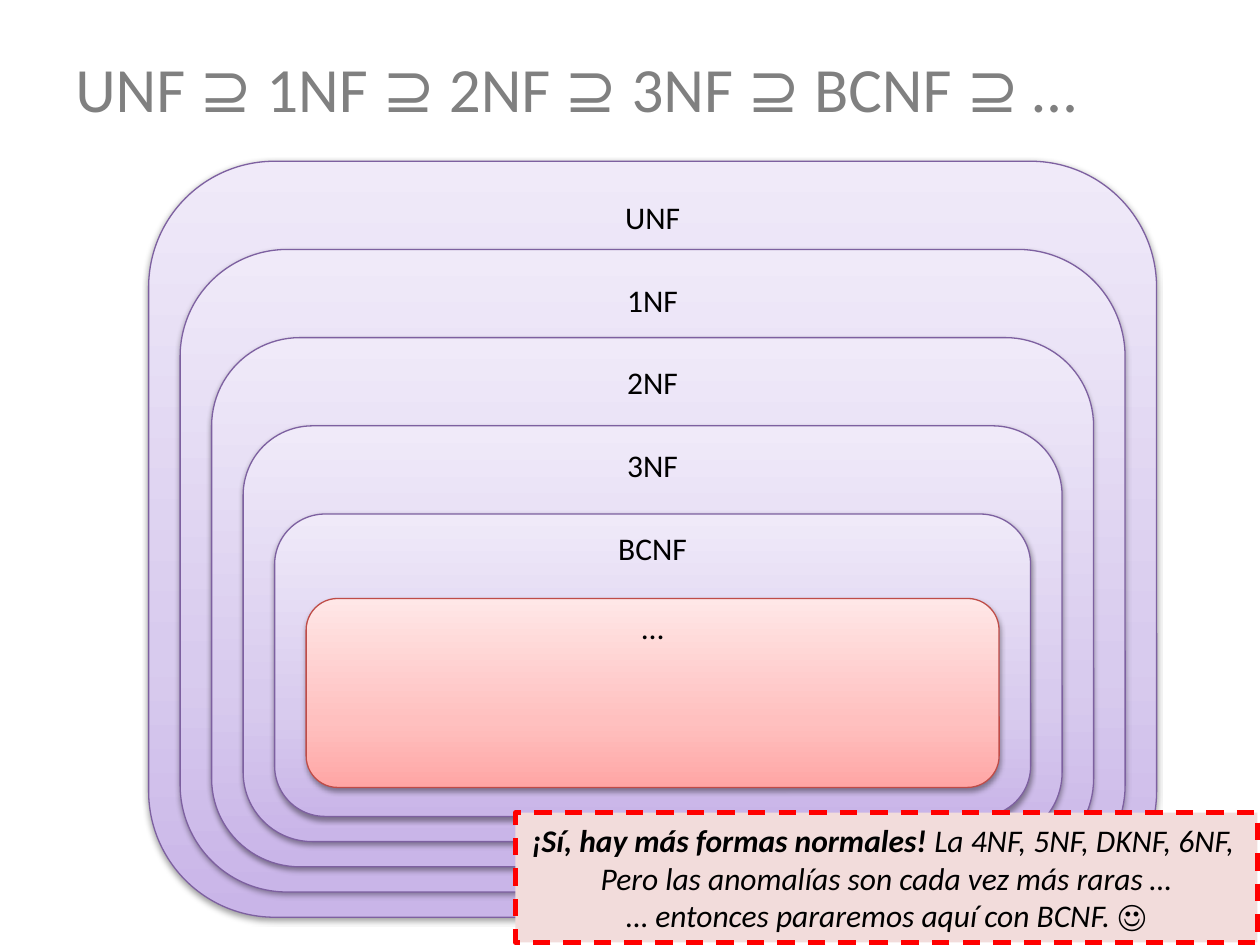
"""Build a slide showing the normal forms as nested sets."""
from copy import deepcopy

from lxml import etree
from pptx import Presentation
from pptx.dml.color import RGBColor
from pptx.enum import dml, shapes, text
from pptx.oxml import ns
from pptx.util import Inches, Pt

BLACK = RGBColor(0x00, 0x00, 0x00)
GREY = RGBColor(0x80, 0x80, 0x80)
RED = RGBColor(0xFF, 0x00, 0x00)
PINK = RGBColor(0xF2, 0xDC, 0xDB)
PURPLE_LINE = RGBColor(0x7D, 0x60, 0xA0)
PURPLE_STOPS = [RGBColor(0xC9, 0xB5, 0xE8), RGBColor(0xD8, 0xCB, 0xEE), RGBColor(0xF0, 0xEA, 0xF9)]
RED_LINE = RGBColor(0xBF, 0x4C, 0x48)
RED_STOPS = [RGBColor(0xFF, 0xA6, 0xA5), RGBColor(0xFF, 0xC0, 0xBF), RGBColor(0xFF, 0xE7, 0xE7)]
STOP_POSITIONS = [0, 0.35, 1]


def add_run(paragraph, words, size=18, color=BLACK, **styles):
    run = paragraph.add_run()
    run.text = words
    run.font.color.rgb = color
    for name, value in {"name": "Calibri", "size": Pt(size), **styles}.items():
        setattr(run.font, name, value)


def add_set(slide, label, box, stops, line_color):
    shape = slide.shapes.add_shape(
        shapes.MSO_SHAPE.ROUNDED_RECTANGLE, *[Inches(length) for length in box])
    shape.fill.gradient()
    shape.fill.gradient_angle = 90
    properties = shape.element.spPr
    stop_list = properties.find(".//" + ns.qn("a:gsLst"))
    stop_list.append(deepcopy(stop_list[0]))
    for stop, position, color in zip(shape.fill.gradient_stops, STOP_POSITIONS, stops):
        stop.position = position
        stop.color.rgb = color
    shape.line.color.rgb = line_color
    shape.line.width = Pt(0.75)

    shape.shadow.inherit = False
    shadow = etree.SubElement(
        properties.find(ns.qn("a:effectLst")), ns.qn("a:outerShdw"),
        blurRad=str(Pt(3.1)), dist=str(Pt(1.6)), dir="5400000", rotWithShape="0")
    shadow_color = etree.SubElement(shadow, ns.qn("a:srgbClr"), val="000000")
    etree.SubElement(shadow_color, ns.qn("a:alpha"), val="38000")

    frame = shape.text_frame
    frame.margin_top = 0
    frame.vertical_anchor = text.MSO_ANCHOR.TOP
    frame.paragraphs[0].alignment = text.PP_ALIGN.CENTER
    add_run(frame.paragraphs[0], label)


presentation = Presentation()
presentation.slide_width = Inches(10)
presentation.slide_height = Inches(7.5)
slide = presentation.slides.add_slide(presentation.slide_layouts[6])

title = slide.shapes.add_textbox(Inches(0.5), Inches(0.3), Inches(9), Inches(0.78))
title.text_frame.word_wrap = True
title.text_frame.vertical_anchor = text.MSO_ANCHOR.MIDDLE
add_run(title.text_frame.paragraphs[0], "UNF ⊇ 1NF ⊇ 2NF ⊇ 3NF ⊇ BCNF ⊇ …", 36, GREY)

for level, label in enumerate(["UNF", "1NF", "2NF", "3NF", "BCNF"]):
    box = (1.18 + 0.25 * level, 1.28 + 0.7 * level, 8 - 0.5 * level, 6 - 0.9 * level)
    add_set(slide, label, box, PURPLE_STOPS, PURPLE_LINE)
add_set(slide, "…", (2.43, 4.75, 5.5, 1.5), RED_STOPS, RED_LINE)

callout = slide.shapes.add_shape(
    shapes.MSO_SHAPE.RECTANGLE, Inches(4.09), Inches(6.45), Inches(5.89), Inches(1.03))
callout.shadow.inherit = False
callout.fill.solid()
callout.fill.fore_color.rgb = PINK
callout.line.color.rgb = RED
callout.line.width = Pt(2.5)
callout.line.dash_style = dml.MSO_LINE.DASH
frame = callout.text_frame
frame.vertical_anchor = text.MSO_ANCHOR.MIDDLE

callout_lines = [
    [("¡Sí, hay más formas normales! ", {"bold": True, "italic": True}),
     ("La 4NF, 5NF, DKNF, 6NF, ", {"italic": True})],
    [("Pero las anomalías son cada vez más raras …", {"italic": True})],
    [("… entonces pararemos aquí con BCNF. ", {"italic": True}), ("☺", {})],
]
for index, runs in enumerate(callout_lines):
    paragraph = frame.add_paragraph() if index else frame.paragraphs[0]
    paragraph.alignment = text.PP_ALIGN.CENTER
    for words, styles in runs:
        add_run(paragraph, words, **styles)

presentation.save("out.pptx")
